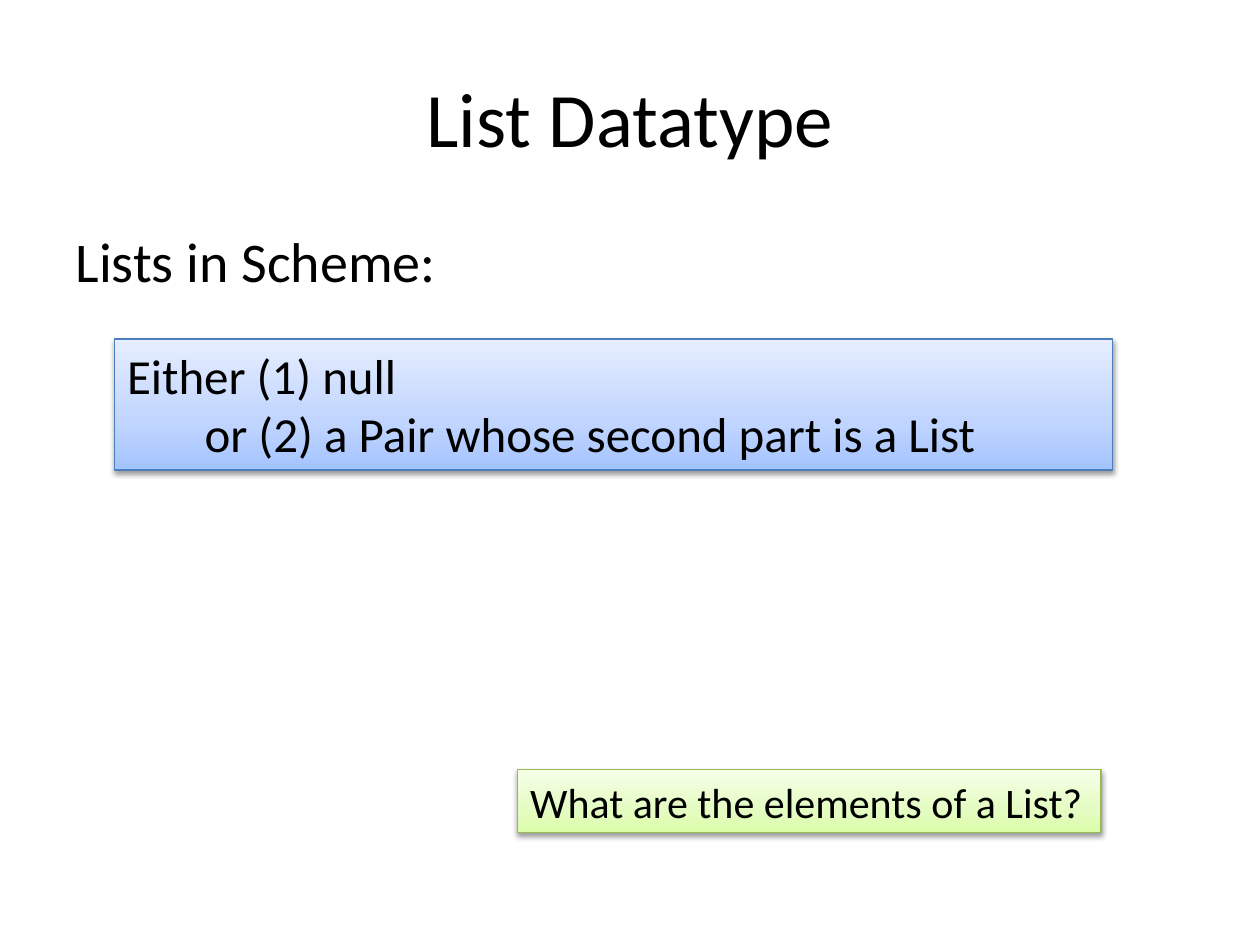
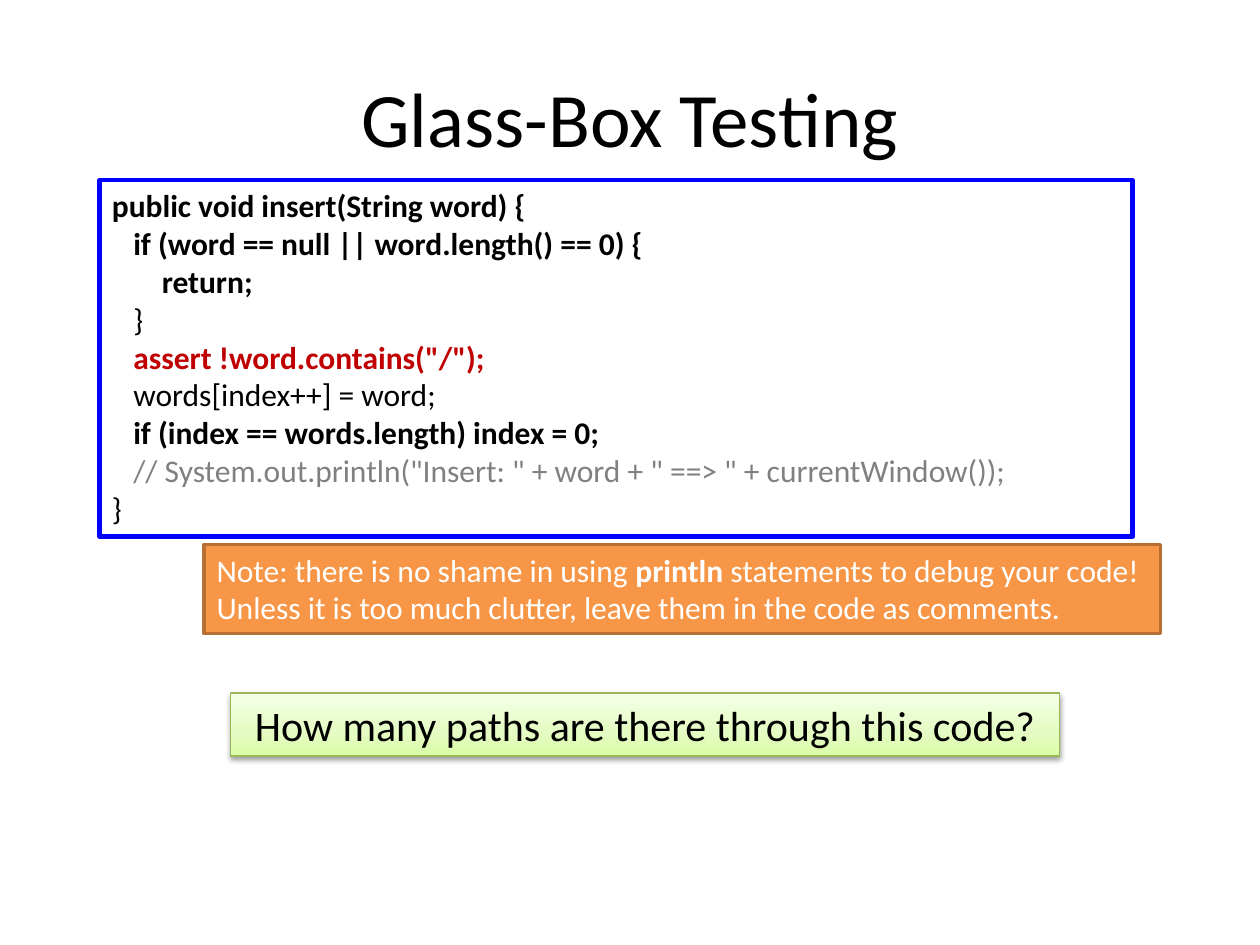
from copy import deepcopy
from dataclasses import dataclass

from lxml.etree import SubElement
from pptx import Presentation
from pptx.dml.color import RGBColor
from pptx.enum.shapes import MSO_SHAPE
from pptx.enum.text import MSO_ANCHOR, MSO_AUTO_SIZE, PP_ALIGN
from pptx.oxml.ns import qn
from pptx.util import Emu, Inches, Pt


@dataclass(frozen=True)
class Theme:
    font: str = "Calibri"
    black: str = "000000"
    white: str = "FFFFFF"
    red: str = "C00000"
    gray: str = "808080"
    frame: str = "0000FF"
    note: str = "F79646"
    rust: str = "B76F34"
    green: tuple = ("DAFDA7", "E4FCC2", "F5FFE7")
    moss: str = "98B955"
    blue: tuple = ("A4C4FF", "BFD4FF", "E6EEFF")
    navy: str = "4B7EBC"
    title: int = 44
    body: int = 32
    rule: int = 28
    ask: int = 24
    code: int = 18


T = Theme()
COLS, ROWS = 20, 15
WIDE, HIGH = Inches(10), Inches(7.5)
STOPS = (0, 0.35, 1)
SPACE = 0.226


def place(shape, box):
    left, top, width, height = box
    shape.left = Emu(int(left * WIDE / COLS))
    shape.top = Emu(int(top * HIGH / ROWS))
    shape.width = Emu(int(width * WIDE / COLS))
    shape.height = Emu(int(height * HIGH / ROWS))


def write(frame, lines, size, color=T.black, align=PP_ALIGN.LEFT):
    for num, (steps, parts) in enumerate(lines):
        para = frame.add_paragraph() if num else frame.paragraphs[0]
        para.alignment = align
        props = para._p.get_or_add_pPr()
        props.set("marL", str(Pt(steps * SPACE * size)))
        props.set("indent", "0")
        for text, bold, tint in parts:
            run = para.add_run()
            run.text = text
            run.font.name = T.font
            run.font.size = Pt(size)
            run.font.bold = bold
            run.font.color.rgb = RGBColor.from_string(tint or color)


def line(text, steps=0, bold=False, tint=None):
    return steps, [(text, bold, tint)]


def panel(slide, box, edge, weight, wrap=True):
    shape = slide.shapes.add_shape(MSO_SHAPE.RECTANGLE, 0, 0, 0, 0)
    place(shape, box)
    shape.shadow.inherit = False
    shape.fill.background()
    shape.line.color.rgb = RGBColor.from_string(edge)
    shape.line.width = Pt(weight)
    frame = shape.text_frame
    frame.word_wrap = wrap
    frame.auto_size = MSO_AUTO_SIZE.SHAPE_TO_FIT_TEXT
    frame.vertical_anchor = MSO_ANCHOR.TOP
    return shape


def shade(shape, colors):
    fill = shape.fill
    fill.gradient()
    fill.gradient_angle = 90
    stops = shape._element.spPr.find(qn("a:gradFill")).find(qn("a:gsLst"))
    stops.append(deepcopy(stops[0]))
    for stop, spot, color in zip(fill.gradient_stops, STOPS, colors):
        stop.position = spot
        stop.color.rgb = RGBColor.from_string(color)
    glow = shape._element.spPr.find(qn("a:effectLst"))
    cast = SubElement(glow, qn("a:outerShdw"), blurRad=str(Pt(3.1)),
                      dist=str(Pt(1.6)), dir="5400000", rotWithShape="0")
    tint = SubElement(cast, qn("a:srgbClr"), val=T.black)
    SubElement(tint, qn("a:alpha"), val="38000")


def head(slide, text):
    title = slide.shapes.title
    place(title, (1, 0.6, 18, 2.5))
    title.text_frame.vertical_anchor = MSO_ANCHOR.MIDDLE
    write(title.text_frame, [line(text)], T.title, align=PP_ALIGN.CENTER)


def lead(slide, box, text):
    body = slide.placeholders[1]
    place(body, box)
    write(body.text_frame, [line(text)], T.body)
    SubElement(body.text_frame.paragraphs[0]._p.pPr, qn("a:buNone"))


def ask(slide, box, text, align=PP_ALIGN.LEFT, wrap=True):
    shape = panel(slide, box, T.moss, 0.75, wrap)
    shade(shape, T.green)
    write(shape.text_frame, [line(text)], T.ask, align=align)


def rule(slide, box, lines):
    shape = panel(slide, box, T.navy, 0.75)
    shade(shape, T.blue)
    write(shape.text_frame, lines, T.rule)


def code(slide, box, lines):
    shape = panel(slide, box, T.frame, 2.5)
    write(shape.text_frame, lines, T.code)


def note(slide, box, lines):
    shape = panel(slide, box, T.rust, 2, wrap=False)
    shape.fill.solid()
    shape.fill.fore_color.rgb = RGBColor.from_string(T.note)
    write(shape.text_frame, lines, T.code, T.white)


def lists(deck):
    slide = deck.slides.add_slide(deck.slide_layouts[1])
    head(slide, "List Datatype")
    lead(slide, (1, 3.5, 18, 1.5), "Lists in Scheme:")
    ask(slide, (8.22, 12.22, 9.26, 1), "What are the elements of a List?",
        wrap=False)
    rule(slide, (1.82, 5.38, 15.84, 2.08), [
        line("Either (1) null"),
        line("or (2) a Pair whose second part is a List", 7),
    ])


def tests(deck):
    slide = deck.slides.add_slide(deck.slide_layouts[5])
    head(slide, "Glass-Box Testing")
    code(slide, (1.58, 2.86, 16.4, 5.66), [
        line("public void insert(String word) {", bold=True),
        line("if (word == null || word.length() == 0) {", 3, True),
        line("return;", 7, True),
        line("}", 3),
        line('assert !word.contains("/");', 3, True, T.red),
        line("words[index++] = word;", 3),
        line("if (index == words.length) index = 0;", 3, True),
        line('// System.out.println("Insert: " + word + " ==> " + '
             'currentWindow());', 3, tint=T.gray),
        line("}"),
    ])
    ask(slide, (3.66, 11, 13.16, 1),
        "How many paths are there through this code?", PP_ALIGN.CENTER)
    note(slide, (3.24, 8.64, 15.18, 1.42), [
        (0, [("Note: there is no shame in using ", False, None),
             ("println", True, None),
             (" statements to debug your code!", False, None)]),
        line("Unless it is too much clutter, leave them in the code "
             "as comments."),
    ])


def main():
    deck = Presentation()
    deck.slide_width, deck.slide_height = WIDE, HIGH
    lists(deck)
    tests(deck)
    deck.save("out.pptx")


if __name__ == "__main__":
    main()
